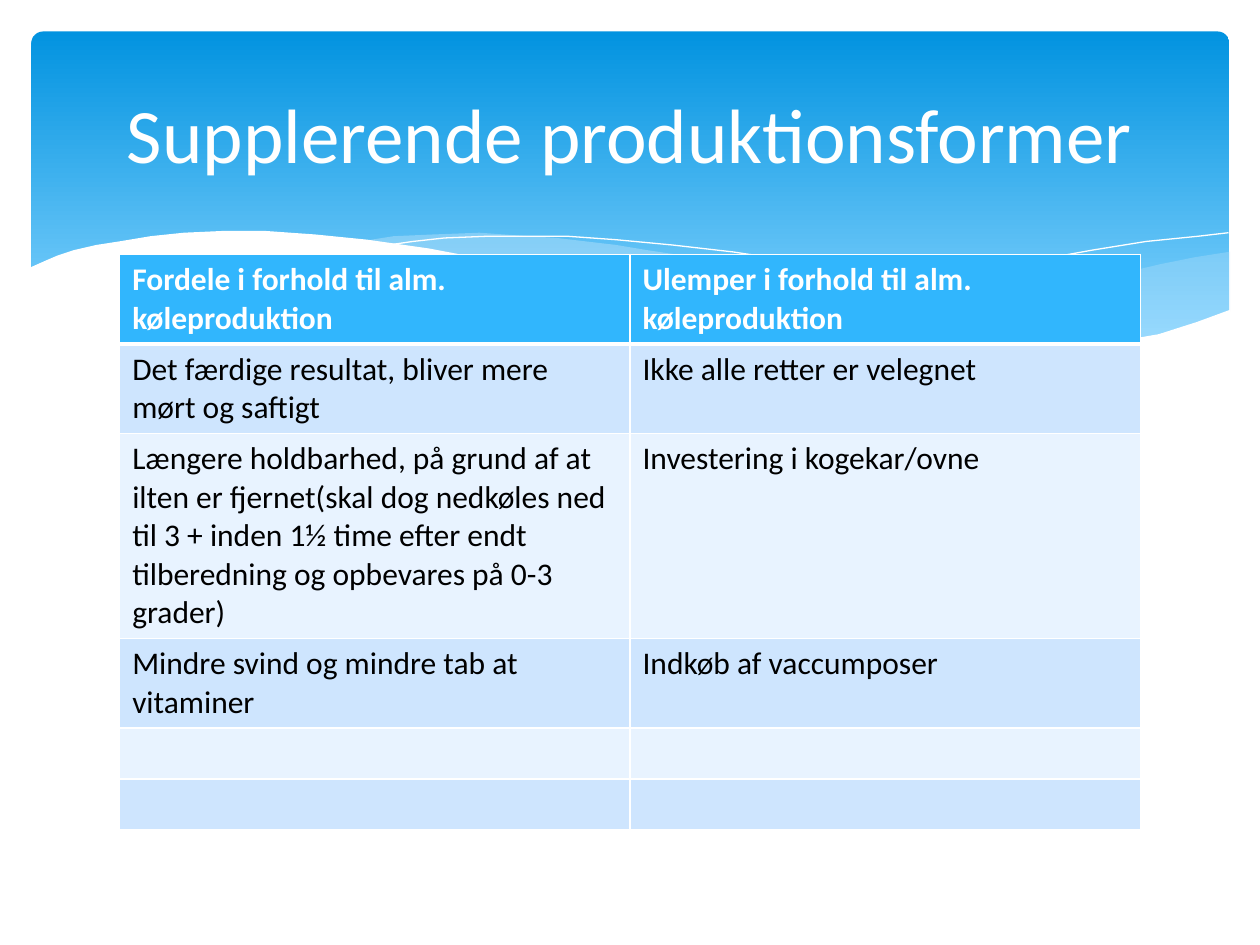
from dataclasses import dataclass

from lxml.etree import SubElement
from pptx import Presentation
from pptx.dml.color import RGBColor
from pptx.enum.shapes import MSO_SHAPE
from pptx.enum.text import MSO_ANCHOR, PP_ALIGN
from pptx.oxml.ns import qn
from pptx.util import Pt


@dataclass(frozen=True)
class Theme:
    font: str = "Calibri"
    title_size: float = 44
    body_size: float = 18
    white: str = "FFFFFF"
    black: str = "000000"
    banner_top: str = "0293E0"
    banner_bottom: str = "83D3FE"
    wave: str = "C6E7FC"
    header: str = "31B6FD"
    bands: tuple = ("CEE5FE", "E8F3FF")


THEME = Theme()

RIGHT_WAVE = [
    (702, 144), (682.6, 146.9), (663.1, 151.2), (641.5, 155.5), (619.9, 160.6),
    (579.6, 170.6), (542.2, 178.6), (508.3, 185), (475.9, 190.8), (497.5, 193.7),
    (517.7, 195.8), (545, 198.7), (570.2, 199.6), (593.3, 199.9), (614.9, 198.7),
    (634.3, 196.6), (651.6, 193.7), (668.2, 189.4), (683.3, 185), (693.4, 181.4),
    (702.7, 177.8), (702.7, 144),
]
MIDDLE_WAVE = [
    (643, 196.6), (623.5, 193.7), (602.6, 190.8), (581, 187.2), (558, 182.9),
    (533.5, 177.8), (508.3, 172.8), (481, 166.3), (452.9, 159.8), (430.6, 154.1),
    (409.7, 149.8), (389.5, 146.2), (370.1, 142.6), (352.1, 139.7), (334.8, 137.5),
    (318.2, 136.1), (302.4, 134.6), (273.6, 133.2), (247.7, 133.9), (225.4, 135.4),
    (205.9, 137.5), (232.6, 141.1), (260.6, 146.2), (290.9, 151.9), (323.3, 159.8),
    (353.5, 167), (381.6, 172.8), (407.5, 178.6), (432.7, 183.6), (456.5, 187.9),
    (478.8, 191.5), (500.4, 194.4), (519.8, 197.3), (538.6, 198.7), (565.2, 200.2),
    (589, 200.2), (610.6, 199.4), (630.7, 198),
]
LONG_CREST = [
    (222.5, 140.4), (236.2, 138.2), (254.2, 136.1), (278.6, 134.6), (299.5, 134.6),
    (324, 135.4), (352.1, 136.8), (383.8, 139.7), (419, 144), (457.9, 149.8),
    (500.4, 157.7), (547.2, 167.8), (598.3, 180.7), (653, 195.8),
]
RIGHT_CREST = [
    (441.4, 185), (470.2, 177.1), (500.4, 169.2), (538.6, 160.6), (580.3, 151.2),
    (623.5, 143.3), (655.2, 138.2), (684.7, 134.6), (702, 133.2),
]
WHITE_WAVE = [
    (703.4, 177.1), (684, 184.3), (662.4, 190.8), (638.6, 195.1), (612, 198),
    (582.5, 199.4), (547.9, 198), (509.8, 194.4), (466.6, 188.6), (416.9, 180),
    (362.2, 167.8), (321.8, 158.4), (281.5, 149), (244.8, 141.8), (210.2, 136.8),
    (180, 133.9), (151.9, 132.5), (127.4, 132.5), (105.1, 133.2), (85.7, 134.6),
    (68.4, 137.5), (54.7, 140.4), (42.5, 143.3), (33.1, 146.2), (25.9, 149),
    (16.6, 153.4), (16.6, 236.9), (703.4, 236.9),
]

ROWS = [
    ("Fordele i forhold til alm. køleproduktion",
     "Ulemper i forhold til alm. køleproduktion"),
    ("Det færdige resultat, bliver mere mørt og saftigt",
     "Ikke alle retter er velegnet"),
    ("Længere holdbarhed, på grund af at ilten er fjernet(skal dog nedkøles ned "
     "til 3 + inden 1½ time efter endt tilberedning og opbevares på 0-3 grader)",
     "Investering i kogekar/ovne"),
    ("Mindre svind og mindre tab at vitaminer", "Indkøb af vaccumposer"),
    ("", ""),
    ("", ""),
]


def color(value):
    return RGBColor.from_string(value)


def add_run(paragraph, text, size, font_color, bold=False):
    run = paragraph.add_run()
    run.text = text
    run.font.name = THEME.font
    run.font.size = Pt(size)
    run.font.bold = bold
    run.font.color.rgb = color(font_color)


def add_banner(slide):
    banner = slide.shapes.add_shape(
        MSO_SHAPE.ROUNDED_RECTANGLE, Pt(18), Pt(18), Pt(684.5), Pt(194.5))
    banner.adjustments[0] = 0.034
    banner.shadow.inherit = False
    banner.line.fill.background()
    banner.fill.gradient()
    banner.fill.gradient_angle = 270
    stops = zip(banner.fill.gradient_stops, (0, 0.9),
                (THEME.banner_top, THEME.banner_bottom))
    for stop, position, stop_color in stops:
        stop.position = position
        stop.color.rgb = color(stop_color)


def build_outline(slide, points, close):
    builder = slide.shapes.build_freeform(*points[0], scale=Pt(1))
    builder.add_line_segments(points[1:], close=close)
    shape = builder.convert_to_shape()
    shape.shadow.inherit = False
    return shape


def add_wave(slide, points, fill_color, opacity=100):
    """Add a filled wave; opacity is in percent."""
    wave = build_outline(slide, points, close=True)
    wave.line.fill.background()
    wave.fill.solid()
    wave.fill.fore_color.rgb = color(fill_color)
    if opacity < 100:
        color_element = wave._element.spPr.find(qn("a:solidFill"))[0]
        SubElement(color_element, qn("a:alpha"), val=str(opacity * 1000))


def add_crest(slide, points):
    crest = build_outline(slide, points, close=False)
    crest.fill.background()
    crest.line.color.rgb = color(THEME.white)
    crest.line.width = Pt(0)


def set_borders(cell, bottom_width):
    """Draw white borders; must run before the cell is filled."""
    properties = cell._tc.get_or_add_tcPr()
    widths = {"a:lnL": 1, "a:lnR": 1, "a:lnT": 1, "a:lnB": bottom_width}
    for side, width in widths.items():
        line = SubElement(properties, qn(side), w=str(Pt(width)))
        fill = SubElement(line, qn("a:solidFill"))
        SubElement(fill, qn("a:srgbClr"), val=THEME.white)


def add_comparison_table(slide):
    frame = slide.shapes.add_table(
        len(ROWS), 2, Pt(68.4), Pt(145.4), Pt(583.2), Pt(29.2 * len(ROWS)))
    for row_index, texts in enumerate(ROWS):
        is_header = row_index == 0
        fill_color = THEME.header if is_header else THEME.bands[(row_index - 1) % 2]
        for column_index, text in enumerate(texts):
            cell = frame.table.cell(row_index, column_index)
            set_borders(cell, 3 if row_index == 0 else 1)
            cell.fill.solid()
            cell.fill.fore_color.rgb = color(fill_color)
            if text:
                add_run(cell.text_frame.paragraphs[0], text, THEME.body_size,
                        THEME.white if is_header else THEME.black, is_header)
    frame.height = Pt(324.7)


def format_title(slide, text):
    title = slide.shapes.title
    title.left, title.top, title.width, title.height = Pt(36), Pt(26.6), Pt(648), Pt(98.6)
    title.text_frame.vertical_anchor = MSO_ANCHOR.MIDDLE
    paragraph = title.text_frame.paragraphs[0]
    paragraph.alignment = PP_ALIGN.CENTER
    add_run(paragraph, text, THEME.title_size, THEME.white)
    # Bring the title in front of the banner.
    title._element.getparent().append(title._element)


def main():
    presentation = Presentation()
    presentation.slide_width, presentation.slide_height = Pt(720), Pt(540)
    slide = presentation.slides.add_slide(presentation.slide_layouts[5])
    add_banner(slide)
    add_wave(slide, RIGHT_WAVE, THEME.wave, opacity=29)
    add_wave(slide, MIDDLE_WAVE, THEME.wave, opacity=40)
    add_crest(slide, LONG_CREST)
    add_crest(slide, RIGHT_CREST)
    add_wave(slide, WHITE_WAVE, THEME.white)
    add_comparison_table(slide)
    format_title(slide, "Supplerende produktionsformer")
    presentation.save("out.pptx")


if __name__ == "__main__":
    main()
